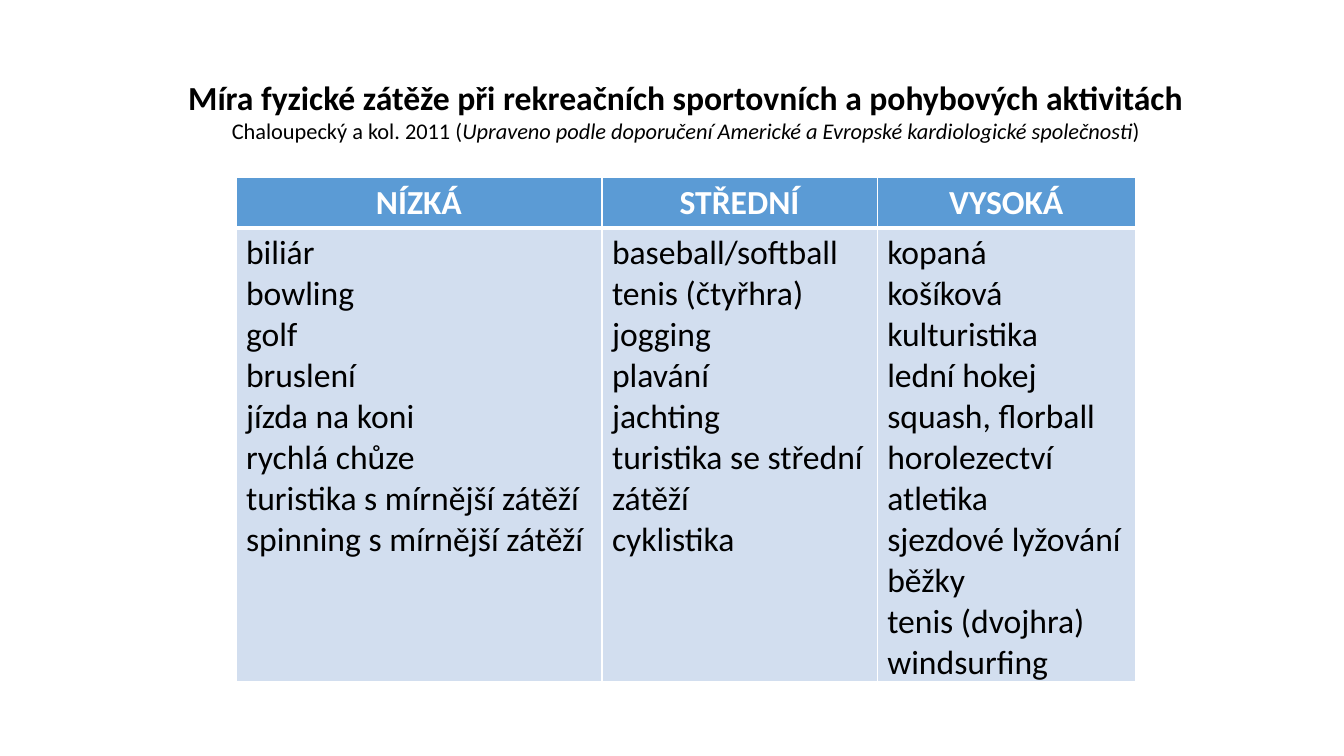
import pptx
import pptx.util
import pptx.dml.color
import pptx.enum.text
import lxml.etree

COLORS = {"text": "000000", "header_text": "FFFFFF", "border": "FFFFFF",
          "header": "5B9BD5", "body": "D2DEEF"}
CENTER = pptx.enum.text.PP_ALIGN.CENTER
LEFT = pptx.enum.text.PP_ALIGN.LEFT
Inches = pptx.util.Inches


def add_span(para, text, color, **formats):
    span = para.add_run()
    span.text = text
    span.font.color.rgb = pptx.dml.color.RGBColor.from_string(COLORS[color])
    for name, value in {"name": "Calibri", **formats}.items():
        setattr(span.font, name, value)


def add_borders(cell, widths):
    """Draw solid cell borders; widths maps an edge letter to points."""
    properties = cell._tc.get_or_add_tcPr()
    for position, (edge, width) in enumerate(widths.items()):
        line = lxml.etree.Element(pptx.oxml.ns.qn(f"a:ln{edge}"), w=str(pptx.util.Pt(width)))
        fill = lxml.etree.SubElement(line, pptx.oxml.ns.qn("a:solidFill"))
        lxml.etree.SubElement(fill, pptx.oxml.ns.qn("a:srgbClr"), val=COLORS["border"])
        properties.insert(position, line)


deck = pptx.Presentation()
deck.slide_width, deck.slide_height = Inches(13.33), Inches(7.5)
page = deck.slides.add_slide(deck.slide_layouts[6])

# Heading
heading = page.shapes.add_textbox(Inches(0.73), Inches(0.71), Inches(12.14), Inches(0.77)).text_frame
heading.word_wrap = True
title = heading.paragraphs[0]
source = heading.add_paragraph()
title.alignment = source.alignment = CENTER
add_span(title, "Míra fyzické zátěže při rekreačních sportovních a pohybových aktivitách",
         "text", size=pptx.util.Pt(24), bold=True)
for text, italic in [
    ("Chaloupecký a kol. 2011 (", False),
    ("Upraveno podle doporučení Americké a Evropské kardiologické společnosti", True),
    (")", False),
]:
    add_span(source, text, "text", size=pptx.util.Pt(16), italic=italic)

# Table: one column per level of load
levels = [
    ("NÍZKÁ", 3.63, ["biliár", "bowling", "golf", "bruslení", "jízda na koni", "rychlá chůze",
                     "turistika s mírnější zátěží", "spinning s mírnější zátěží"]),
    ("STŘEDNÍ", 2.73, ["baseball/softball", "tenis (čtyřhra)", "jogging", "plavání", "jachting",
                       "turistika se střední zátěží", "cyklistika"]),
    ("VYSOKÁ", 2.56, ["kopaná", "košíková", "kulturistika", "lední hokej", "squash, florball",
                      "horolezectví", "atletika", "sjezdové lyžování", "běžky",
                      "tenis (dvojhra)", "windsurfing"]),
]
frame = page.shapes.add_table(2, len(levels), Inches(2.34), Inches(1.76), Inches(8.92), Inches(5))
table = frame.table
for row in table.rows:
    row.height = Inches(0.41)
frame.height = Inches(5)

for column, (level, width, activities) in enumerate(levels):
    table.columns[column].width = Inches(width)
    for row, (lines, fill, color, bold, alignment, borders) in enumerate([
        ([level], "header", "header_text", True, CENTER, {"L": 1, "R": 1, "T": 1, "B": 3}),
        (activities, "body", "text", False, LEFT, {"L": 1, "R": 1, "T": 3, "B": 1}),
    ]):
        cell = table.cell(row, column)
        cell.fill.solid()
        cell.fill.fore_color.rgb = pptx.dml.color.RGBColor.from_string(COLORS[fill])
        add_borders(cell, borders)
        for index, line in enumerate(lines):
            para = cell.text_frame.add_paragraph() if index else cell.text_frame.paragraphs[0]
            para.alignment = alignment
            add_span(para, line, color, size=pptx.util.Pt(24), bold=bold)

deck.save("out.pptx")
